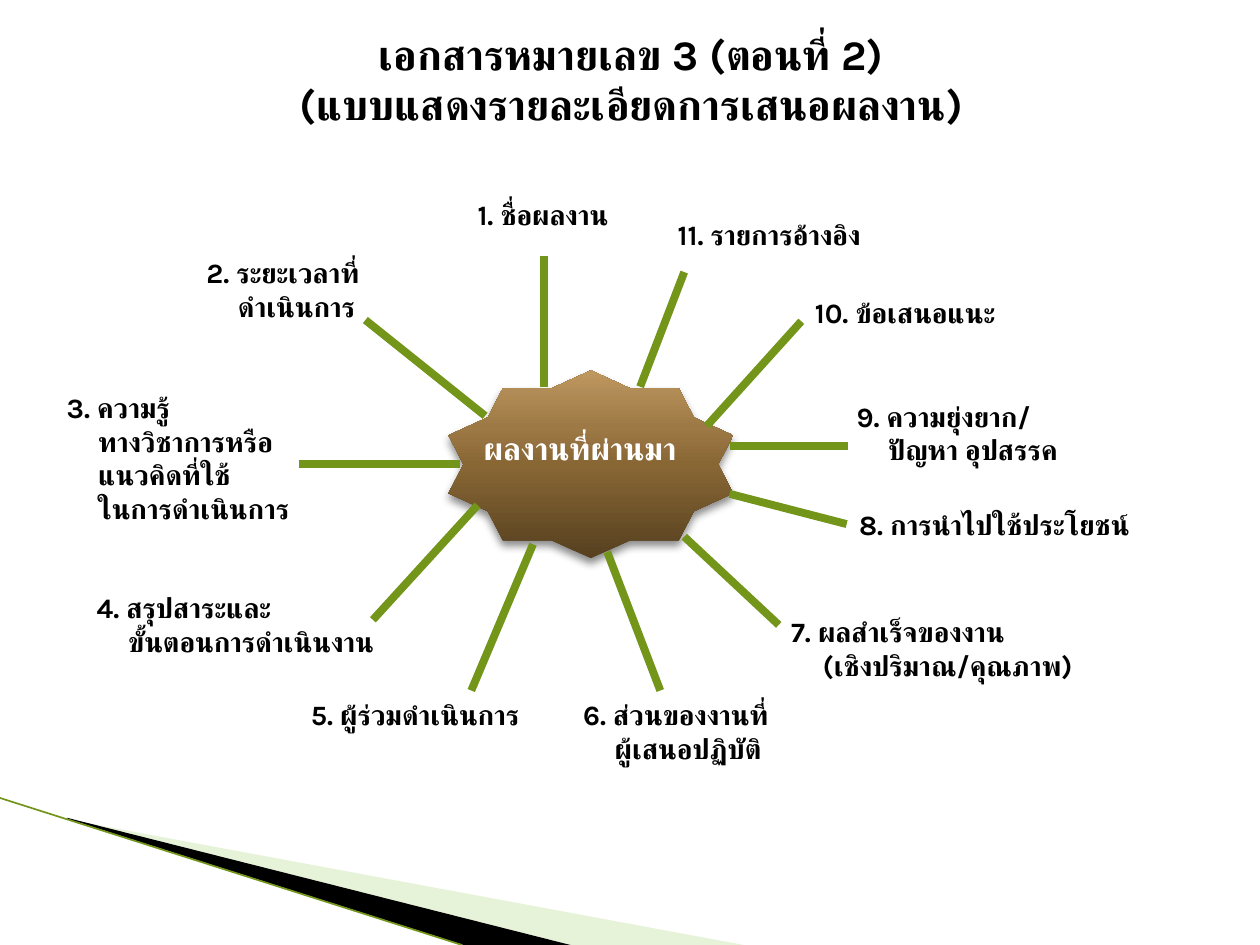
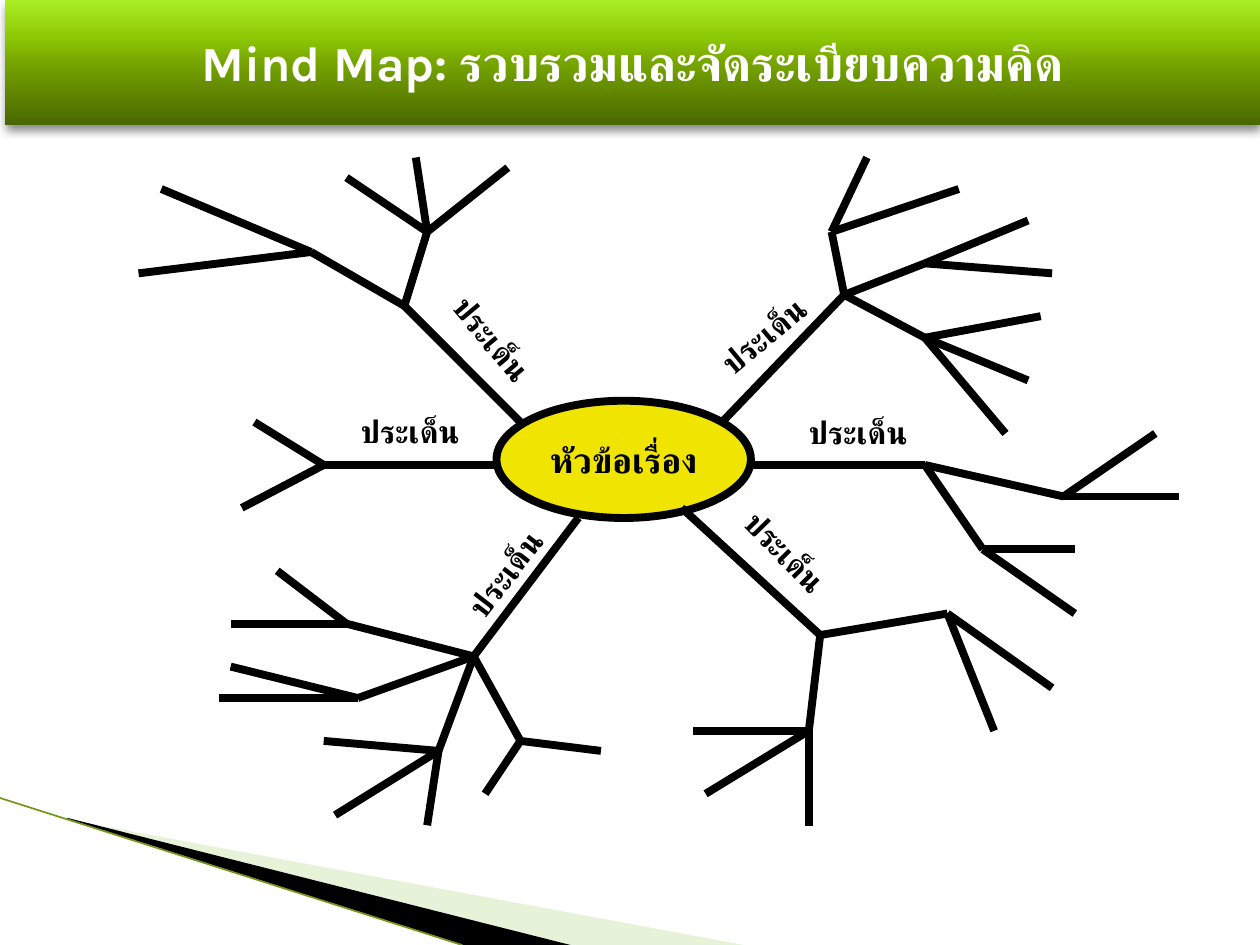
"""Builds two Thai slides: a document outline diagram and a mind map."""
from dataclasses import dataclass

from lxml import etree
from pptx import Presentation
from pptx.dml.color import RGBColor
from pptx.enum.shapes import MSO_CONNECTOR, MSO_SHAPE
from pptx.enum.text import MSO_ANCHOR, PP_ALIGN
from pptx.oxml.ns import qn
from pptx.util import Pt

STRAIGHT = MSO_CONNECTOR.STRAIGHT
RECT, OVAL, STAR = MSO_SHAPE.RECTANGLE, MSO_SHAPE.OVAL, MSO_SHAPE.STAR_10_POINT
LEFT, CENTER = PP_ALIGN.LEFT, PP_ALIGN.CENTER
TOP, MIDDLE = MSO_ANCHOR.TOP, MSO_ANCHOR.MIDDLE

FONT = "Karla"
COLORS = {
    "black": "000000",
    "white": "FFFFFF",
    "olive": "72951A",
    "pale": "C5E19F",
    "yellow": "F0E500",
}
BROWN = ((0, "56401F"), (50, "896735"), (70, "9D7945"), (100, "BF9860"))
GREEN = ((0, "496700"), (50, "76A500"), (70, "8DC804"), (100, "AAEE25"))
STROKE = 4.5
LINE_HEIGHT = 19.44
HANG = 18


@dataclass(frozen=True)
class Box:
    x: float
    y: float
    w: float
    h: float
    rot: float = 0


@dataclass(frozen=True)
class Style:
    size: float
    color: str = "black"
    align: int = LEFT
    anchor: int = TOP
    hang: float = 0
    wrap: bool = True


@dataclass(frozen=True)
class Item:
    x: float
    y: float
    w: float
    lines: tuple
    spoke: tuple
    align: int = LEFT


@dataclass(frozen=True)
class Branch:
    x: float
    y: float
    kids: tuple = ()


@dataclass(frozen=True)
class Trunk:
    x: float
    y: float
    branch: Branch
    label: Box


ITEMS = (
    Item(216.7, 109.4, 187.2, ("1. ชื่อผลงาน",), (311, 221, 311, 146.2), CENTER),
    Item(110.9, 142.6, 147.6, ("2. ระยะเวลาที่", "ดำเนินการ"),
         (277.2, 237.6, 208.8, 182.9)),
    Item(31, 219.6, 159.1,
         ("3. ความรู้", "ทางวิชาการหรือ", "แนวคิดที่ใช้", "ในการดำเนินการ"),
         (262.8, 265, 170.6, 265)),
    Item(48.2, 334.1, 208.8, ("4. สรุปสาระและ", "ขั้นตอนการดำเนินงาน"),
         (272.9, 288.7, 213.1, 354.2)),
    Item(170.6, 395.3, 187.2, ("5. ผู้ร่วมดำเนินการ",),
         (304.6, 311, 269.3, 394.6)),
    Item(326.2, 395.3, 187.2, ("6. ส่วนของงานที่", "ผู้เสนอปฏิบัติ"),
         (347, 315.4, 377.3, 394.6)),
    Item(445, 347.8, 213.8, ("7. ผลสำเร็จของงาน", "(เชิงปริมาณ/คุณภาพ)"),
         (391, 306.7, 445, 357.1)),
    Item(483.8, 286.6, 215.3, ("8. การนำไปใช้ประโยชน์",),
         (416.9, 282.2, 483.8, 299.5)),
    Item(482.4, 224.6, 196.6, ("9. ความยุ่งยาก/", "ปัญหา อุปสรรค"),
         (416.9, 254.9, 484.6, 254.9)),
    Item(458.6, 165.6, 187.2, ("10. ข้อเสนอแนะ",), (403.9, 243.4, 457.9, 183.6)),
    Item(380.2, 121, 187.2, ("11. รายการอ้างอิง",), (365.8, 221, 391, 155.5)),
)

TRUNKS = (
    Trunk(297.4, 241.2, Branch(231.1, 174.8, (
        Branch(244.1, 132.5, (
            Branch(198, 101.5), Branch(237.6, 90), Branch(290.2, 95.8))),
        Branch(177.8, 144, (Branch(79.2, 156.2), Branch(92.2, 108))),
    )), Box(211.7, 179.3, 139.7, 28.8, 50)),
    Trunk(412.6, 241.2, Branch(482.4, 168.5, (
        Branch(475.2, 132.5, (Branch(495.4, 90), Branch(547.9, 108))),
        Branch(528.5, 150.5, (Branch(587.5, 126), Branch(601.2, 156.2))),
        Branch(528.5, 193, (
            Branch(594.7, 180.7), Branch(587.5, 217.4), Branch(574.6, 247.7))),
    )), Box(360.7, 177.1, 151.9, 28.8, 320.3)),
    Trunk(429.1, 265.7, Branch(528.5, 265.7, (
        Branch(607.7, 283.7, (Branch(660.2, 247.7), Branch(673.9, 283.7))),
        Branch(561.6, 313.9, (Branch(614.2, 313.9), Branch(614.2, 350.6))),
    )), Box(412.6, 232.6, 155.5, 28.8)),
    Trunk(389.5, 290.2, Branch(468.7, 362.9, (
        Branch(541.4, 350.6, (Branch(601.2, 393.1), Branch(568.1, 417.6))),
        Branch(462.2, 417.6, (
            Branch(396, 417.6), Branch(403.2, 453.6), Branch(462.2, 472.3))),
    )), Box(379.4, 301, 139.7, 28.8, 45.5)),
    Trunk(330.5, 295.9, Branch(270.7, 375.1, (
        Branch(198, 356.4, (Branch(158.4, 326.2), Branch(131.8, 356.4))),
        Branch(204.5, 398.9, (Branch(131.8, 380.9), Branch(125.3, 398.9))),
        Branch(250.6, 429.1, (
            Branch(185, 423.4), Branch(191.5, 465.8), Branch(244.1, 471.6))),
        Branch(297.4, 423.4, (Branch(277.2, 453.6), Branch(343.4, 429.1))),
    )), Box(218.9, 313.2, 139.7, 28.8, 307.7)),
    Trunk(283.7, 265.7, Branch(185, 265.7, (
        Branch(145.4, 241.2), Branch(138.2, 290.2),
    )), Box(158.4, 231.8, 151.9, 28.8)),
)


def rgb(name: str) -> RGBColor:
    """Look up a named colour."""
    return RGBColor.from_string(COLORS[name])


def add_color(parent, value: str, alpha: int = 100) -> None:
    """Append an RGB colour element with its opacity."""
    clr = etree.SubElement(parent, qn("a:srgbClr"), val=value)
    if alpha < 100:
        etree.SubElement(clr, qn("a:alpha"), val=str(alpha * 1000))


def write(sp, lines: tuple, style: Style) -> None:
    """Put one paragraph of broken lines into a shape."""
    tf = sp.text_frame
    tf.word_wrap = style.wrap
    tf.vertical_anchor = style.anchor
    p = tf.paragraphs[0]
    p.alignment = style.align
    if style.hang:
        pPr = p._p.get_or_add_pPr()
        pPr.set("marL", str(Pt(style.hang)))
        pPr.set("indent", str(-Pt(style.hang)))
    for i, line in enumerate(lines):
        if i:
            p.add_line_break()
        r = p.add_run()
        r.text = line
        r.font.size = Pt(style.size)
        r.font.bold = True
        r.font.color.rgb = rgb(style.color)
        r.font.name = FONT
        etree.SubElement(r._r.get_or_add_rPr(), qn("a:cs"), typeface=FONT)


def add_text(s, box: Box, lines: tuple, style: Style) -> None:
    """Add a text box."""
    sp = s.shapes.add_textbox(Pt(box.x), Pt(box.y), Pt(box.w), Pt(box.h))
    sp.rotation = box.rot
    write(sp, lines, style)


def add_shape(s, kind: int, box: Box):
    """Add a preset shape without shadow or outline."""
    sp = s.shapes.add_shape(kind, Pt(box.x), Pt(box.y), Pt(box.w), Pt(box.h))
    sp.shadow.inherit = False
    sp.line.fill.background()
    return sp


def add_glossy(s, kind: int, box: Box, stops: tuple):
    """Add a preset shape with a vertical gradient and a soft shadow."""
    sp = add_shape(s, kind, box)
    sp.fill.gradient()
    sp.fill.gradient_angle = 90
    spPr = sp._element.spPr
    gs_list = spPr.find(qn("a:gradFill")).find(qn("a:gsLst"))
    for gs in list(gs_list):
        gs_list.remove(gs)
    for pos, value in stops:
        add_color(etree.SubElement(gs_list, qn("a:gs"), pos=str(pos * 1000)), value)
    shadow = etree.SubElement(
        spPr.find(qn("a:effectLst")), qn("a:outerShdw"), blurRad=str(Pt(5)),
        dist=str(Pt(3)), dir="5400000", rotWithShape="0")
    add_color(shadow, COLORS["black"], 45)
    return sp


def add_line(s, x1: float, y1: float, x2: float, y2: float,
             color: str = "black", width: float = STROKE) -> None:
    """Add a straight line."""
    ln = s.shapes.add_connector(STRAIGHT, Pt(x1), Pt(y1), Pt(x2), Pt(y2))
    ln.line.color.rgb = rgb(color)
    ln.line.width = Pt(width)
    etree.SubElement(ln._element.spPr, qn("a:effectLst"))


def add_wedge(s, points: tuple, color: str, alpha: int = 100) -> None:
    """Add a filled polygon."""
    pts = [(Pt(x), Pt(y)) for x, y in points]
    fb = s.shapes.build_freeform(*pts[0])
    fb.add_line_segments(pts[1:])
    sp = fb.convert_to_shape()
    sp.shadow.inherit = False
    sp.line.fill.background()
    sp.fill.solid()
    sp.fill.fore_color.rgb = rgb(color)
    if alpha < 100:
        clr = sp._element.spPr.find(qn("a:solidFill"))[0]
        etree.SubElement(clr, qn("a:alpha"), val=str(alpha * 1000))


def new_slide(prs):
    """Add a blank slide with the corner sweep."""
    s = prs.slides.add_slide(prs.slide_layouts[6])
    add_wedge(s, ((39.6, 468.5), (425, 540), (326, 540), (39.6, 468)), "pale", 40)
    add_wedge(s, ((38.2, 467.3), (326, 540), (265, 540), (38.9, 468)), "black")
    add_line(s, 0, 456, 264, 540, "olive", 0.95)
    return s


def add_branch(s, branch: Branch) -> None:
    """Draw a branch's twigs and all that grow from them."""
    for kid in branch.kids:
        add_line(s, branch.x, branch.y, kid.x, kid.y)
        add_branch(s, kid)


def outline_slide(prs) -> None:
    """Build the eleven-part outline around a star."""
    s = new_slide(prs)
    add_glossy(s, STAR, Box(256.3, 211.7, 162.7, 107.3), BROWN)
    add_text(s, Box(36.7, 0, 648, 90),
             ("เอกสารหมายเลข 3 (ตอนที่ 2)", "(แบบแสดงรายละเอียดการเสนอผลงาน)"),
             Style(24, align=CENTER, anchor=MIDDLE))
    add_text(s, Box(269.3, 241.9, 169.9, 28.8), ("ผลงานที่ผ่านมา",),
             Style(18, "white"))
    for item in ITEMS:
        n = len(item.lines)
        add_text(s, Box(item.x, item.y, item.w, 7.2 + LINE_HEIGHT * n), item.lines,
                 Style(16, align=item.align, hang=HANG if n > 1 else 0))
        add_line(s, *item.spoke, "olive")


def mind_map_slide(prs) -> None:
    """Build the mind map."""
    s = new_slide(prs)
    band = add_glossy(s, RECT, Box(2.9, 0, 717.1, 71.3), GREEN)
    write(band, ("Mind Map: รวบรวมและจัดระเบียบความคิด",),
          Style(28, "white", CENTER, MIDDLE))
    topic = add_shape(s, OVAL, Box(283.7, 229, 145.4, 67))
    topic.fill.solid()
    topic.fill.fore_color.rgb = rgb("yellow")
    topic.line.color.rgb = rgb("black")
    topic.line.width = Pt(STROKE)
    write(topic, ("หัวข้อเรื่อง",),
          Style(20, align=CENTER, anchor=MIDDLE, wrap=False))
    for trunk in TRUNKS:
        add_text(s, trunk.label, ("ประเด็น",), Style(18, align=CENTER))
        add_line(s, trunk.x, trunk.y, trunk.branch.x, trunk.branch.y)
        add_branch(s, trunk.branch)


def main() -> None:
    """Build and save the deck."""
    prs = Presentation()
    prs.slide_width, prs.slide_height = Pt(720), Pt(540)
    outline_slide(prs)
    mind_map_slide(prs)
    prs.save("out.pptx")


if __name__ == "__main__":
    main()
